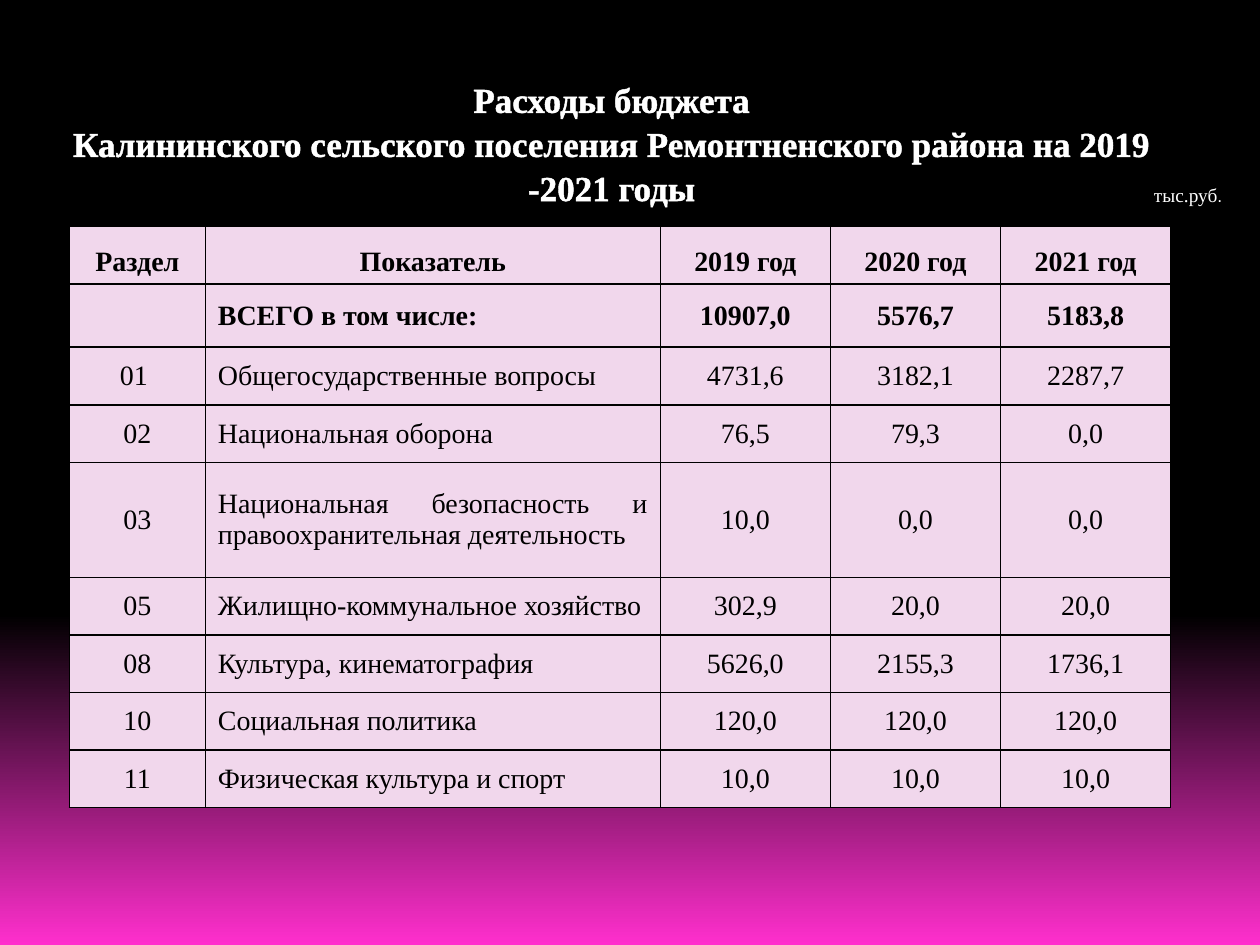
from copy import deepcopy
from dataclasses import dataclass

from lxml import etree
from pptx import Presentation
from pptx.dml.color import RGBColor
from pptx.enum.text import MSO_ANCHOR, MSO_AUTO_SIZE, PP_ALIGN
from pptx.oxml.ns import qn
from pptx.util import Cm, Pt

LEFT, MID, RIGHT, JUST = (
    PP_ALIGN.LEFT, PP_ALIGN.CENTER, PP_ALIGN.RIGHT, PP_ALIGN.JUSTIFY)
TOP, CENTER, BOTTOM = MSO_ANCHOR.TOP, MSO_ANCHOR.MIDDLE, MSO_ANCHOR.BOTTOM
FIXED = MSO_AUTO_SIZE.NONE


@dataclass(frozen=True)
class Theme:
    black: str = "000000"
    white: str = "FFFFFF"
    pink: str = "FF2FCD"
    cell: str = "F1D7EC"
    font: str = "Times New Roman"
    dot: str = "Arial"
    title: int = 20
    body: int = 16
    note: int = 11
    small: int = 10
    line: int = 1


THEME = Theme()
TITLE = ("Расходы бюджета\v"
         "Калининского сельского поселения Ремонтненского района на 2019 -2021 годы")
HEAD = ("Раздел", "Показатель", "2019 год", "2020 год", "2021 год")
ROWS = (
    ("", "ВСЕГО в том числе:", "10907,0", "5576,7", "5183,8"),
    ("01 ", "Общегосударственные вопросы", "4731,6", "3182,1", "2287,7"),
    ("02", "Национальная оборона", "76,5", "79,3", "0,0"),
    ("03", "Национальная безопасность и правоохранительная деятельность",
     "10,0", "0,0", "0,0"),
    ("05", "Жилищно-коммунальное хозяйство", "302,9", "20,0", "20,0"),
    ("08", "Культура, кинематография", "5626,0", "2155,3", "1736,1"),
    ("10", "Социальная политика", "120,0", "120,0", "120,0"),
    ("11", "Физическая культура и спорт", "10,0", "10,0", "10,0"),
)
WIDTHS = (2.74, 9.17, 3.43, 3.43, 3.43)
ROW, TOTAL, TALL = 1.16, 1.27, 2.32


def rgb(color):
    return RGBColor.from_string(color)


def style(font, size, color, bold=False, name=THEME.font):
    font.name, font.size, font.bold = name, Pt(size), bold
    font.color.rgb = rgb(color)


def stroke(parent, tag, color, width, index):
    """Insert a solid line element into a run's or a cell's properties."""
    line = etree.Element(qn(tag), w=str(Pt(width)))
    fill = etree.SubElement(line, qn("a:solidFill"))
    etree.SubElement(fill, qn("a:srgbClr"), val=color)
    parent.insert(index, line)


def paint(slide):
    """Fill the background: black down to 65 %, then fading to pink."""
    fill = slide.background.fill
    fill.gradient()
    fill.gradient_angle = 270
    for stop, color, pos in zip(
            fill.gradient_stops, (THEME.black, THEME.pink), (0.65, 1)):
        stop.color.rgb = rgb(color)
        stop.position = pos
    stops = next(slide.element.iter(qn("a:gsLst")))
    first = deepcopy(stops[0])
    first.set("pos", "0")
    stops.insert(0, first)


def add_title(slide):
    title = slide.shapes.title
    title.left, title.top = Cm(0.58), Cm(1.4)
    title.width, title.height = Cm(23.5), Cm(3.18)
    frame = title.text_frame
    frame.auto_size, frame.vertical_anchor = FIXED, TOP
    frame.word_wrap = True
    para = frame.paragraphs[0]
    para.text = TITLE
    para.alignment, para.line_spacing = MID, 1.05
    style(para.font, THEME.title, THEME.white, True)
    for run in para.runs:
        run.font.bold = True
        stroke(run.font._element, "a:ln", THEME.white, THEME.line, 0)


def add_unit(slide):
    box = slide.shapes.add_textbox(Cm(20.5), Cm(3.58), Cm(4.39), Cm(0.74))
    box.text_frame.word_wrap = True
    para = box.text_frame.paragraphs[0]
    para.alignment = RIGHT
    for text, size, name in (("тыс.руб", THEME.note, THEME.font),
                             (".", THEME.small, THEME.dot)):
        run = para.add_run()
        run.text = text
        style(run.font, size, THEME.white, name=name)


def fill_cell(cell, text, align, anchor, bold):
    cell.fill.solid()
    cell.fill.fore_color.rgb = rgb(THEME.cell)
    cell.vertical_anchor = anchor
    para = cell.text_frame.paragraphs[0]
    para.text = text
    para.alignment = align
    style(para.font, THEME.body, THEME.black, bold)
    props = cell._tc.get_or_add_tcPr()
    for index, side in enumerate("LRTB"):
        stroke(props, f"a:ln{side}", THEME.black, THEME.line, index)


def add_grid(slide):
    rows = (HEAD, *ROWS)
    high = [ROW] * len(rows)
    high[1], high[4] = TOTAL, TALL
    grid = slide.shapes.add_table(
        len(rows), len(HEAD), Cm(1.4), Cm(4.57),
        Cm(sum(WIDTHS)), Cm(sum(high))).table
    for col, width in zip(grid.columns, WIDTHS):
        col.width = Cm(width)
    for r, row in enumerate(rows):
        grid.rows[r].height = Cm(high[r])
        for c, text in enumerate(row):
            align = MID
            if c == 1 and r:
                align = LEFT if r == 1 else JUST
            cell = grid.cell(r, c)
            fill_cell(cell, text, align, CENTER if r else BOTTOM, r < 2)
            if c > 1 and r:
                cell.margin_left = cell.margin_right = Cm(0.18)
                cell.margin_top = cell.margin_bottom = 0


def main():
    deck = Presentation()
    deck.slide_width, deck.slide_height = Cm(25.4), Cm(19.05)
    slide = deck.slides.add_slide(deck.slide_layouts[5])
    paint(slide)
    add_title(slide)
    add_grid(slide)
    add_unit(slide)
    deck.save("out.pptx")


if __name__ == "__main__":
    main()
